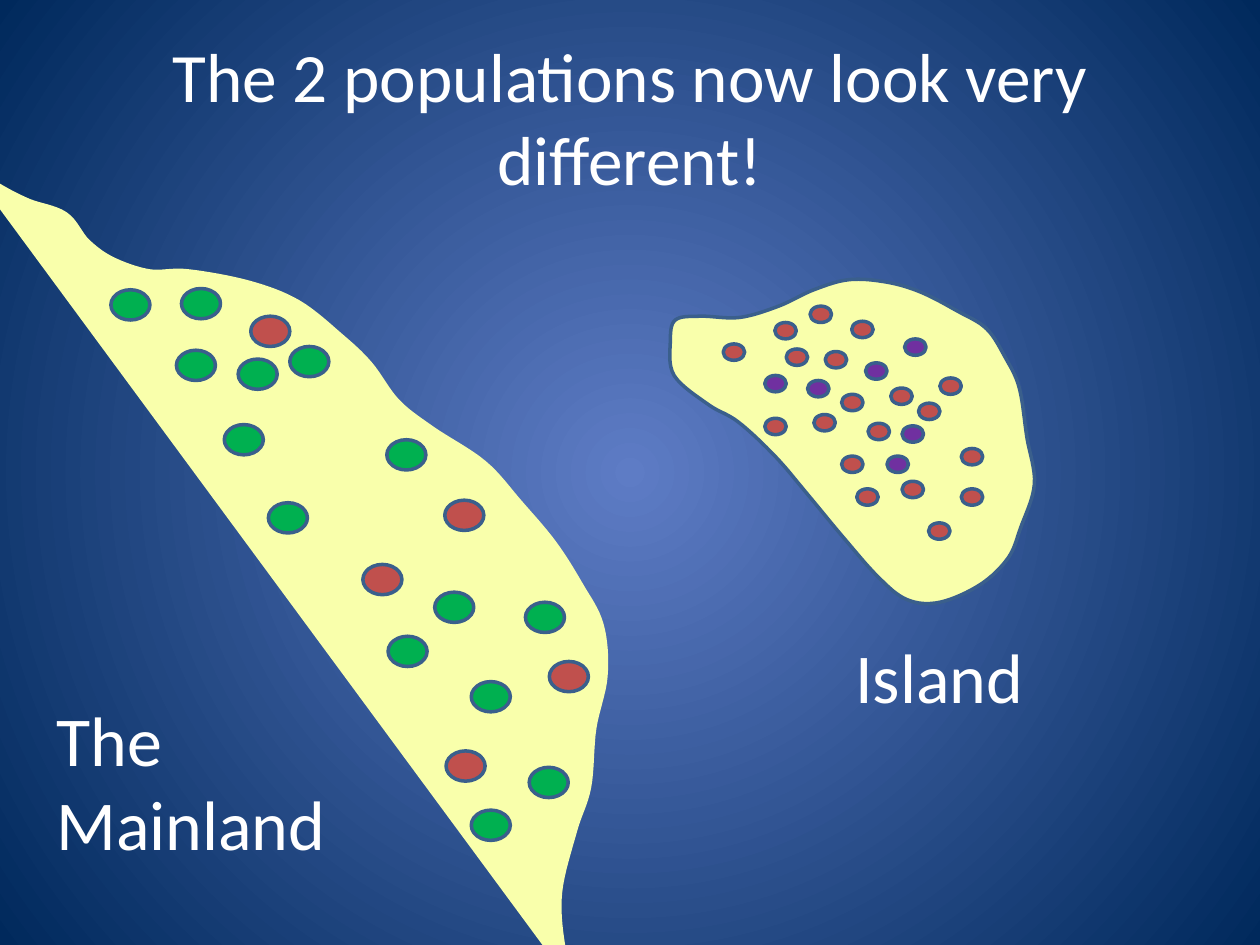
from pptx import Presentation
from pptx.dml.color import RGBColor
from pptx.enum.shapes import MSO_SHAPE
from pptx.enum.text import MSO_ANCHOR, MSO_AUTO_SIZE, PP_ALIGN
from pptx.oxml.ns import qn
from pptx.oxml.xmlchemy import OxmlElement
from pptx.util import Cm, Pt

COLOURS = {
    "sea centre": "5E7CC5",
    "sea edge": "00295C",
    "land": "F9FFAB",
    "outline": "3A5F8C",
    "red": "C0504D",
    "green": "00B050",
    "purple": "7030A0",
    "text": "FFFFFF",
}
RGB = {part: RGBColor.from_string(code) for part, code in COLOURS.items()}
MAP_UNIT = Cm(2.54)  # one step of the map grid used for coasts and individuals
STEPS_PER_SPAN = 8  # straight pieces that stand in for each curved span


def smooth_coast(landmarks, closed):
    """Return points on a Catmull-Rom curve that runs through the landmarks."""
    if closed:
        knots = [landmarks[-1], *landmarks, *landmarks[:2]]
    else:
        knots = [landmarks[0], *landmarks, landmarks[-1]]
    curve = [landmarks[0]]
    for span in zip(knots, knots[1:], knots[2:], knots[3:]):
        for step in range(1, STEPS_PER_SPAN + 1):
            t = step / STEPS_PER_SPAN
            curve.append([
                b + t / 2 * (c - a + t * (2 * a - 5 * b + 4 * c - d
                                          + t * (3 * b - a - 3 * c + d)))
                for a, b, c, d in zip(*span)
            ])
    return curve


def paint(shape, fill, line, width):
    shape.shadow.inherit = False
    shape.fill.solid()
    shape.fill.fore_color.rgb = RGB[fill]
    shape.line.color.rgb = RGB[line]
    shape.line.width = Pt(width)


# Each land: coast landmarks, and the top left corners of its individuals
island = {
    "landmarks": [
        (5.56, 2.51), (5.87, 2.52), (6.18, 2.43), (6.46, 2.3), (6.74, 2.22),
        (7.04, 2.24), (7.31, 2.32), (7.6, 2.47), (7.83, 2.61), (7.98, 2.84),
        (8.09, 3.08), (8.15, 3.47), (8.21, 3.84), (8.1, 4.19), (8, 4.43),
        (7.78, 4.64), (7.46, 4.78), (7.2, 4.76), (6.97, 4.58), (6.68, 4.25),
        (6.39, 3.9), (6.15, 3.62), (5.86, 3.35), (5.62, 3.21), (5.35, 2.98),
        (5.32, 2.71), (5.36, 2.54),
    ],
    "closed": True,
    "border": ("outline", 2),
    "individual size": (0.17, 0.13),
    "individuals": {
        "red": [
            (6.76, 2.55), (6.24, 2.77), (6.68, 3.13), (7.46, 3), (6.46, 3.29),
            (7.63, 3.56), (6.68, 3.62), (7.16, 3.82), (5.74, 2.73), (6.43, 2.43),
            (6.15, 2.56), (6.89, 3.36), (7.07, 3.08), (6.8, 3.88), (6.55, 2.79),
            (7.29, 3.2), (6.07, 3.32), (7.63, 3.88), (7.37, 4.15),
        ],
        "purple": [
            (6.07, 2.98), (6.41, 3.02), (6.87, 2.88), (7.18, 2.69),
            (7.16, 3.38), (7.04, 3.62),
        ],
    },
}
mainland = {
    "landmarks": [
        (-0.2, 1.39), (0, 1.52), (0.22, 1.63), (0.5, 1.73), (0.67, 1.94),
        (0.88, 2.09), (1.18, 2.19), (1.49, 2.19), (1.97, 2.28), (2.35, 2.43),
        (2.68, 2.69), (2.91, 2.91), (3.13, 3.21), (3.41, 3.43), (3.82, 3.7),
        (4.1, 4.01), (4.37, 4.33), (4.58, 4.66), (4.74, 4.97), (4.77, 5.36),
        (4.68, 5.78), (4.64, 6.24), (4.53, 6.58), (4.41, 7.07), (4.43, 7.49),
        (4.52, 7.79),
    ],
    "closed": False,
    "border": ("land", 7.75),
    "individual size": (0.31, 0.24),
    "individuals": {
        "green": [
            (0.88, 2.3), (1.44, 2.29), (1.4, 2.78), (1.89, 2.85), (1.78, 3.37),
            (2.3, 2.75), (2.13, 3.99), (3.07, 3.49), (3.74, 5.41), (3.45, 4.7),
            (3.08, 5.05), (4.17, 4.78), (4.2, 6.09), (3.74, 6.43),
        ],
        "red": [
            (3.53, 3.97), (2.88, 4.48), (4.36, 5.25), (1.99, 2.51), (3.54, 5.96),
        ],
    },
}

deck = Presentation()
deck.slide_width, deck.slide_height = Cm(25.4), Cm(19.05)
slide = deck.slides.add_slide(deck.slide_layouts[5])

# Sea: gradient from the centre outwards
sea = slide.background.fill
sea.gradient()
for stop, part in zip(sea.gradient_stops, ("sea centre", "sea edge")):
    stop.color.rgb = RGB[part]
gradient = next(slide.element.iter(qn("a:gradFill")))
gradient.remove(gradient.find(qn("a:lin")))
radial = OxmlElement("a:path")
radial.set("path", "circle")
centre = OxmlElement("a:fillToRect")
for side in "ltrb":
    centre.set(side, "50000")
radial.append(centre)
gradient.append(radial)

# Lands, each grouped with the individuals that live on it
for land in (island, mainland):
    members = slide.shapes.add_group_shape().shapes
    start, *coast = [
        (round(x * MAP_UNIT), round(y * MAP_UNIT))
        for x, y in smooth_coast(land["landmarks"], land["closed"])
    ]
    builder = members.build_freeform(*start)
    builder.add_line_segments(coast, close=land["closed"])
    paint(builder.convert_to_shape(), "land", *land["border"])
    for colour, corners in land["individuals"].items():
        for corner in corners:
            box = [round(v * MAP_UNIT) for v in (*corner, *land["individual size"])]
            individual = members.add_shape(MSO_SHAPE.OVAL, *box)
            paint(individual, colour, "outline", 2)

# Title and land names
title = slide.shapes.title
title_place = {"left": Cm(1.27), "top": Cm(0.76), "width": Cm(22.86), "height": Cm(3.18)}
for name, value in title_place.items():
    setattr(title, name, value)
mainland_name = slide.shapes.add_textbox(Cm(0.89), Cm(13.92), Cm(6.2), Cm(3.68))
island_name = slide.shapes.add_textbox(Cm(16.99), Cm(12.65), Cm(6.2), Cm(1.96))

title_frame = {"vertical_anchor": MSO_ANCHOR.MIDDLE, "word_wrap": True}
name_frame = {"auto_size": MSO_AUTO_SIZE.SHAPE_TO_FIT_TEXT, "word_wrap": True}
for holder, wording, size, alignment, frame_format in (
    (title, "The 2 populations now look very different!", 39.6, PP_ALIGN.CENTER, title_frame),
    (mainland_name, "The Mainland", 40, PP_ALIGN.LEFT, name_frame),
    (island_name, "Island", 40, PP_ALIGN.LEFT, name_frame),
):
    for name, value in frame_format.items():
        setattr(holder.text_frame, name, value)
    paragraph = holder.text_frame.paragraphs[0]
    paragraph.alignment = alignment
    run = paragraph.add_run()
    run.text = wording
    for name, value in {"name": "Calibri", "size": Pt(size)}.items():
        setattr(run.font, name, value)
    run.font.color.rgb = RGB["text"]

deck.save("out.pptx")
